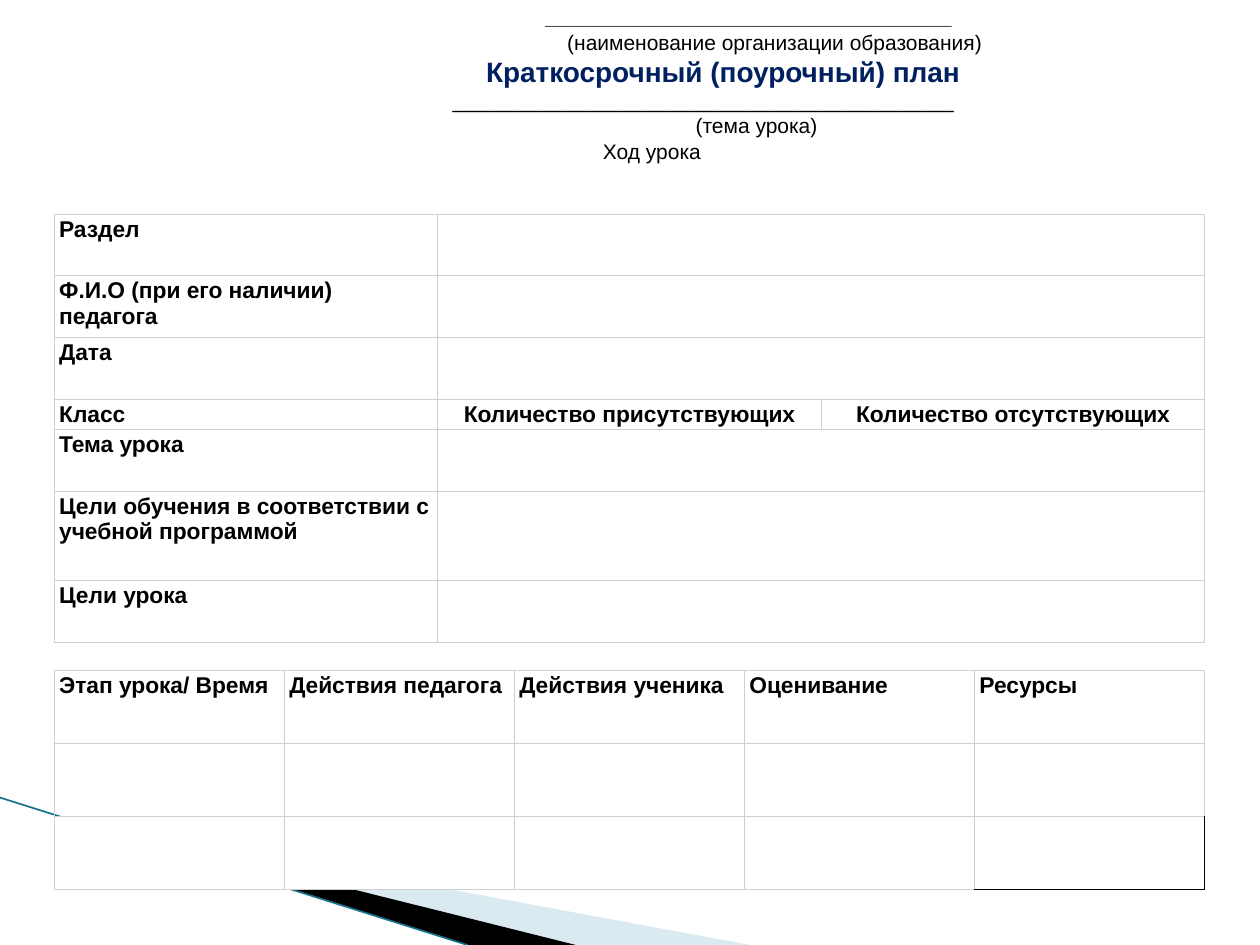
from dataclasses import dataclass

from lxml.etree import SubElement
from pptx import Presentation
from pptx.dml.color import RGBColor
from pptx.enum.shapes import MSO_CONNECTOR
from pptx.enum.text import MSO_ANCHOR, PP_ALIGN
from pptx.oxml.ns import qn
from pptx.util import Inches, Pt

COLORS = {
    "black": "000000",
    "white": "FFFFFF",
    "title": "002060",
    "grid": "CFCFCF",
    "pale": "A0CBDC",
    "teal": "17718A",
}
BLANK_LINE = "_" * 43


@dataclass
class HeadingLine:
    text: str
    indent: float
    size: int = 12
    font: str = "Arial"
    color: str = "black"
    bold: bool = False


@dataclass
class Wedge:
    points: list[tuple[float, float]]
    color: str
    opacity: int = 100


@dataclass
class Grid:
    top: float
    columns: int
    row_heights: list[float]
    texts: dict[tuple[int, int], str]
    merged_rows: tuple[int, ...] = ()
    centered: tuple[tuple[int, int], ...] = ()
    white_cells: tuple[tuple[int, int], ...] = ()
    dark_corner: bool = False


HEADING = [
    HeadingLine(BLANK_LINE, 1.79, 9, "Courier New"),
    HeadingLine("(наименование организации образования)", 2.21),
    HeadingLine("Краткосрочный (поурочный) план", 1.39, 16, color="title", bold=True),
    HeadingLine(BLANK_LINE, 1.08),
    HeadingLine("(тема урока)", 1.92),
    HeadingLine("Ход урока", 0.26),
]
WEDGES = [
    Wedge([(0.55, 6.5), (5.95, 7.5), (4.56, 7.5)], "pale", 40),
    Wedge([(0.53, 6.49), (4.57, 7.5), (3.72, 7.5)], "black"),
]
LESSON_LABELS = [
    "Раздел",
    "Ф.И.О (при его наличии) педагога",
    "Дата",
    "Класс",
    "Тема урока",
    "Цели обучения в соответствии с учебной программой",
    "Цели урока",
]
STAGE_LABELS = [
    "Этап урока/ Время",
    "Действия педагога",
    "Действия ученика",
    "Оценивание",
    "Ресурсы",
]
LESSON_GRID = Grid(
    top=1.7,
    columns=3,
    row_heights=[0.49, 0.49, 0.49, 0.24, 0.49, 0.71, 0.49],
    texts={(row, 0): label for row, label in enumerate(LESSON_LABELS)}
    | {(3, 1): "Количество присутствующих", (3, 2): "Количество отсутствующих"},
    merged_rows=(0, 1, 2, 4, 5, 6),
    centered=((3, 1), (3, 2)),
)
STAGE_GRID = Grid(
    top=5.32,
    columns=5,
    row_heights=[0.58] * 3,
    texts={(0, column): label for column, label in enumerate(STAGE_LABELS)},
    white_cells=tuple((2, column) for column in range(4)),
    dark_corner=True,
)


def rgb(name: str) -> RGBColor:
    return RGBColor.from_string(COLORS[name])


def draw_wedge(page, wedge: Wedge) -> None:
    points = [(Inches(x), Inches(y)) for x, y in wedge.points]
    builder = page.shapes.build_freeform(*points[0], scale=1.0)
    builder.add_line_segments(points[1:], close=True)
    shape = builder.convert_to_shape()
    shape.shadow.inherit = False
    shape.line.fill.background()
    shape.fill.solid()
    shape.fill.fore_color.rgb = rgb(wedge.color)
    if wedge.opacity < 100:
        color = shape.fill._xPr.find(qn("a:solidFill"))[0]
        SubElement(color, qn("a:alpha"), val=str(wedge.opacity * 1000))


def draw_accent_line(page) -> None:
    line = page.shapes.add_connector(
        MSO_CONNECTOR.STRAIGHT, Inches(0), Inches(6.33), Inches(3.71), Inches(7.5)
    )
    line.line.color.rgb = rgb("teal")
    line.line.width = Pt(0.95)
    SubElement(line._element.spPr, qn("a:effectLst"))


def set_border(cell, side: str, color: str, width: float) -> None:
    properties = cell._tc.get_or_add_tcPr()
    border = SubElement(properties, qn(f"a:ln{side}"), w=str(Pt(width)))
    fill = SubElement(border, qn("a:solidFill"))
    SubElement(fill, qn("a:srgbClr"), val=COLORS[color])


def style_cell(cell, filled: bool, corner: bool) -> None:
    cell.margin_left = cell.margin_right = Inches(0.04)
    cell.margin_top = cell.margin_bottom = Inches(0.02)
    for side in "LRTB":
        if corner and side in "RB":
            set_border(cell, side, "black", 1)
        else:
            set_border(cell, side, "grid", 0.75)
    if filled:
        cell.fill.solid()
        cell.fill.fore_color.rgb = rgb("white")
    else:
        cell.fill.background()


def draw_grid(page, grid: Grid) -> None:
    row_count = len(grid.row_heights)
    frame = page.shapes.add_table(
        row_count, grid.columns, Inches(0.43), Inches(grid.top),
        Inches(9.13), Inches(sum(grid.row_heights)),
    )
    table = frame.table
    table.first_row = table.horz_banding = False
    last = (row_count - 1, grid.columns - 1)
    for row, height in enumerate(grid.row_heights):
        table.rows[row].height = Inches(height)
        for column in range(grid.columns):
            place = (row, column)
            cell = table.cell(row, column)
            style_cell(cell, place in grid.white_cells, grid.dark_corner and place == last)
            if place not in grid.texts:
                continue
            cell.text = grid.texts[place]
            para = cell.text_frame.paragraphs[0]
            para.alignment = PP_ALIGN.CENTER if place in grid.centered else PP_ALIGN.LEFT
            para.font.name = "Arial"
            para.font.size = Pt(13)
            para.font.bold = True
            para.font.color.rgb = rgb("black")
    for row in grid.merged_rows:
        table.cell(row, 1).merge(table.cell(row, 2))


def draw_heading(page) -> None:
    box = page.shapes.add_textbox(Inches(0.28), Inches(0.04), Inches(9.53), Inches(1.43))
    frame = box.text_frame
    frame.word_wrap = True
    frame.vertical_anchor = MSO_ANCHOR.TOP
    frame.margin_left = frame.margin_right = frame.margin_bottom = 0
    frame.margin_top = Inches(0.04)
    for index, line in enumerate(HEADING):
        para = frame.add_paragraph() if index else frame.paragraphs[0]
        para.text = line.text
        para.alignment = PP_ALIGN.CENTER
        para._p.get_or_add_pPr().set("marL", str(Inches(line.indent)))
        para.font.name = line.font
        para.font.size = Pt(line.size)
        para.font.bold = line.bold
        para.font.color.rgb = rgb(line.color)


def main() -> None:
    deck = Presentation()
    deck.slide_width, deck.slide_height = Inches(10), Inches(7.5)
    page = deck.slides.add_slide(deck.slide_layouts[6])
    for wedge in WEDGES:
        draw_wedge(page, wedge)
    draw_accent_line(page)
    for grid in (LESSON_GRID, STAGE_GRID):
        draw_grid(page, grid)
    draw_heading(page)
    deck.save("out.pptx")


if __name__ == "__main__":
    main()
